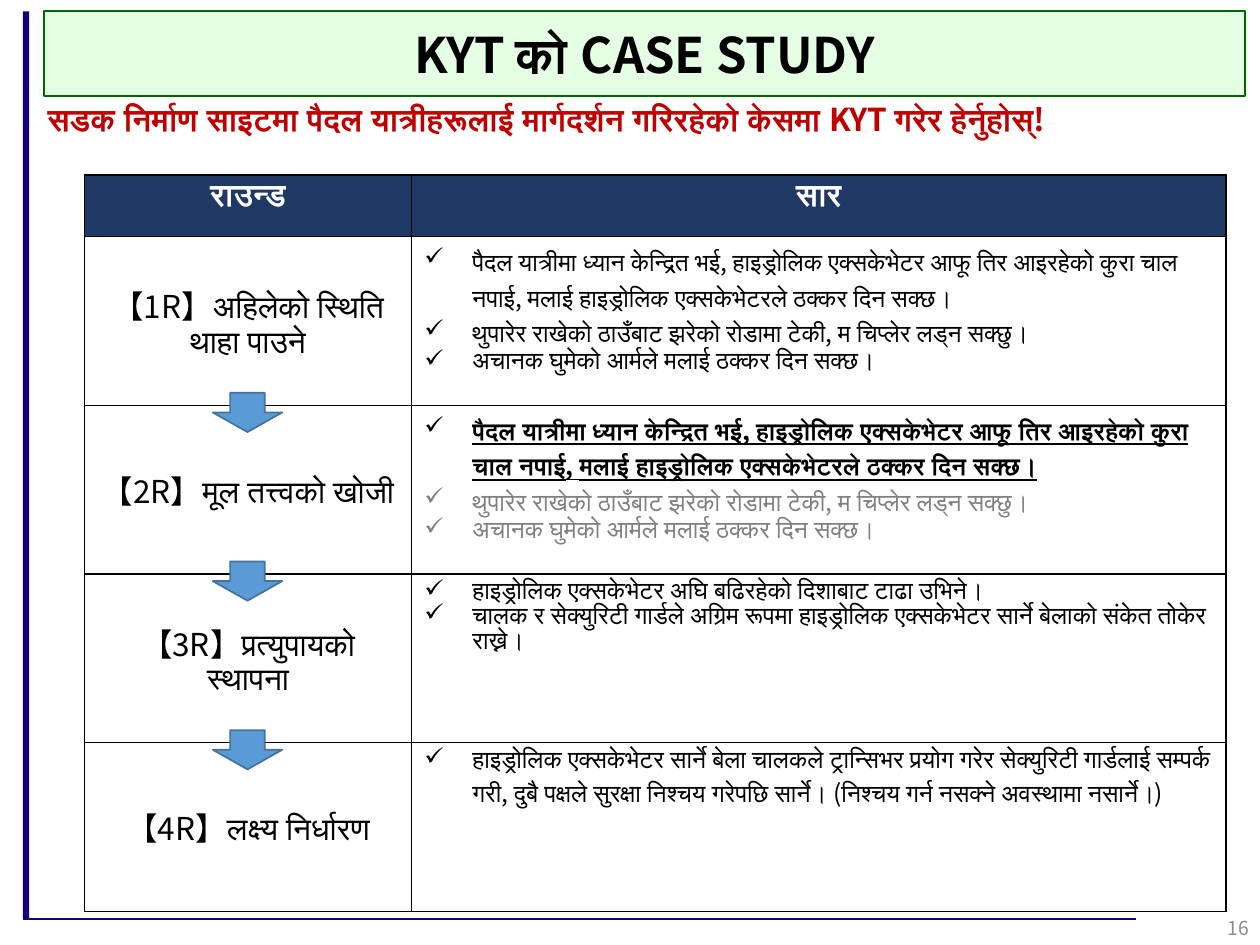
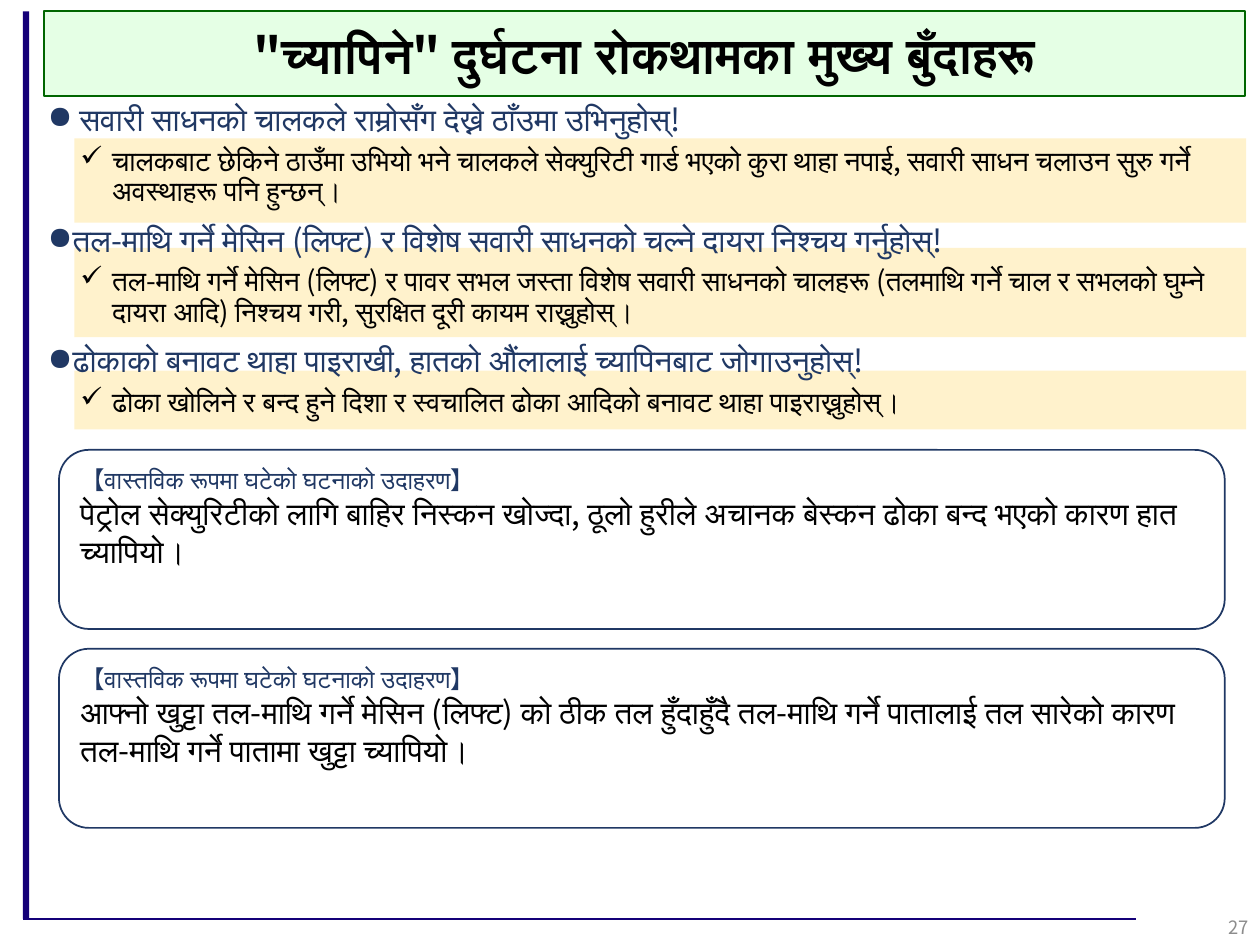
from lxml.etree import SubElement
from pptx import Presentation
from pptx.dml.color import RGBColor
from pptx.enum.shapes import MSO_CONNECTOR, MSO_SHAPE as Shape
from pptx.enum.text import MSO_ANCHOR as Anchor, PP_ALIGN as Align
from pptx.oxml import parse_xml
from pptx.oxml.ns import nsdecls, qn
from pptx.util import Cm, Pt

FONT = "Noto Sans CJK JP"
COLORS = {
    "frame": "140078", "title_fill": "CCFFCC", "title_line": "006600",
    "navy": "203864", "red": "C00000", "black": "000000", "white": "FFFFFF",
    "muted": "808080", "page_number": "8C8C8C", "band": "FFF2CC",
    "arrow": "5B9BD5", "arrow_line": "43739E",
}

HAZARDS = [
    "पैदल यात्रीमा ध्यान केन्द्रित भई, हाइड्रोलिक एक्सकेभेटर आफू तिर आइरहेको कुरा चाल नपाई, "
    "मलाई हाइड्रोलिक एक्सकेभेटरले ठक्कर दिन सक्छ।",
    "थुपारेर राखेको ठाउँबाट झरेको रोडामा टेकी, म चिप्लेर लड्न सक्छु।",
    "अचानक घुमेको आर्मले मलाई ठक्कर दिन सक्छ।",
]
ROUNDS = [
    ("【1R】अहिलेको स्थिति थाहा पाउने", HAZARDS),
    ("【2R】मूल तत्त्वको खोजी", HAZARDS),
    ("【3R】प्रत्युपायको स्थापना", [
        "हाइड्रोलिक एक्सकेभेटर अघि बढिरहेको दिशाबाट टाढा उभिने।",
        "चालक र सेक्युरिटी गार्डले अग्रिम रूपमा हाइड्रोलिक एक्सकेभेटर सार्ने बेलाको संकेत तोकेर राख्ने।",
    ]),
    ("【4R】लक्ष्य निर्धारण", [
        "हाइड्रोलिक एक्सकेभेटर सार्ने बेला चालकले ट्रान्सिभर प्रयोग गरेर सेक्युरिटी गार्डलाई सम्पर्क गरी, "
        "दुबै पक्षले सुरक्षा निश्चय गरेपछि सार्ने। (निश्चय गर्न नसक्ने अवस्थामा नसार्ने।)",
    ]),
]
KEY_ROUND = 2

# Heading, its left margin in cm, and the detail below it
POINTS = [
    ("सवारी साधनको चालकले राम्रोसँग देख्ने ठाँउमा उभिनुहोस्!", 0.64,
     "चालकबाट छेकिने ठाउँमा उभियो भने चालकले सेक्युरिटी गार्ड भएको कुरा थाहा नपाई, "
     "सवारी साधन चलाउन सुरु गर्ने अवस्थाहरू पनि हुन्छन्।"),
    ("तल-माथि गर्ने मेसिन (लिफ्ट) र विशेष सवारी साधनको चल्ने दायरा निश्चय गर्नुहोस्!", 0.03,
     "तल-माथि गर्ने मेसिन (लिफ्ट) र पावर सभल जस्ता विशेष सवारी साधनको चालहरू "
     "(तलमाथि गर्ने चाल र सभलको घुम्ने दायरा आदि) निश्चय गरी, सुरक्षित दूरी कायम राख्नुहोस्।"),
    ("ढोकाको बनावट थाहा पाइराखी, हातको औंलालाई च्यापिनबाट जोगाउनुहोस्!", 0.03,
     "ढोका खोलिने र बन्द हुने दिशा र स्वचालित ढोका आदिको बनावट थाहा पाइराख्नुहोस्।"),
]
BANDS = [(2.79, 1.7), (5.0, 1.8), (7.47, 1.19)]
CASE_LABEL = "【वास्तविक रूपमा घटेको घटनाको उदाहरण】"
CASES = [
    "पेट्रोल सेक्युरिटीको लागि बाहिर निस्कन खोज्दा, ठूलो हुरीले अचानक बेस्कन ढोका बन्द भएको कारण "
    "हात च्यापियो।",
    "आफ्नो खुट्टा तल-माथि गर्ने मेसिन (लिफ्ट) को ठीक तल हुँदाहुँदै तल-माथि गर्ने पातालाई तल सारेको कारण "
    "तल-माथि गर्ने पातामा खुट्टा च्यापियो।",
]


def rgb(name):
    return RGBColor.from_string(COLORS[name])


def write(para, text, size, color="black", bold=False, underline=False, align=Align.LEFT):
    para.text = text
    para.alignment = align
    for span in para.runs:
        font = span.font
        font.name, font.size = FONT, Pt(size)
        font.bold, font.underline = bold, underline
        font.color.rgb = rgb(color)
        east_asian = SubElement(span._r.get_or_add_rPr(), qn("a:ea"))
        east_asian.set("typeface", FONT)


def next_para(frame):
    """Return the empty first paragraph, or a new one once that is filled."""
    first = frame.paragraphs[0]
    return frame.add_paragraph() if first.runs else first


def set_bullet(para, char, margin, hanging):
    props = para._p.get_or_add_pPr()
    props.set("marL", str(Cm(margin)))
    props.set("indent", str(-Cm(hanging)))
    SubElement(props, qn("a:buChar")).set("char", char)


def add_box(page, kind, left, top, width, height, fill, line=None):
    box = page.shapes.add_shape(kind, Cm(left), Cm(top), Cm(width), Cm(height))
    box.shadow.inherit = False
    box.fill.solid()
    box.fill.fore_color.rgb = rgb(fill)
    if line:
        box.line.color.rgb = rgb(line)
        box.line.width = Pt(1)
    else:
        box.line.fill.background()
    return box


def add_text(page, left, top, width, height, anchor=Anchor.TOP):
    box = page.shapes.add_textbox(Cm(left), Cm(top), Cm(width), Cm(height))
    frame = box.text_frame
    frame.word_wrap = True
    frame.vertical_anchor = anchor
    return frame


def add_body(page):
    return add_text(page, 0.71, 1.98, 24.59, 16.94)


def add_page(deck, title, number, number_size):
    """Add a blank page with the frame lines, title band and page number."""
    page = deck.slides.add_slide(deck.slide_layouts[6])
    add_box(page, Shape.RECTANGLE, 0.46, 0.23, 0.13, 18.29, "frame")
    rule = page.shapes.add_connector(MSO_CONNECTOR.STRAIGHT, Cm(0.46), Cm(18.52), Cm(22.91), Cm(18.52))
    rule.line.color.rgb = rgb("frame")
    rule.line.width = Pt(1)
    SubElement(rule._element.spPr, qn("a:effectLst"))

    band = add_box(page, Shape.RECTANGLE, 0.89, 0.23, 24.21, 1.7, "title_fill", "title_line")
    tint = band._element.spPr.find(qn("a:solidFill"))[0]
    SubElement(tint, qn("a:alpha")).set("val", "50000")
    band.text_frame.vertical_anchor = Anchor.MIDDLE
    write(band.text_frame.paragraphs[0], title, 28, bold=True, align=Align.CENTER)

    footer = add_text(page, 19.71, 18.19, 5.72, 1.02, Anchor.MIDDLE)
    write(footer.paragraphs[0], number, number_size, "page_number", align=Align.RIGHT)
    return page


def style_cell(cell, fill, anchor=Anchor.TOP):
    cell.fill.solid()
    cell.fill.fore_color.rgb = rgb(fill)
    cell.vertical_anchor = anchor
    props = cell._tc.get_or_add_tcPr()
    for index, side in enumerate("LRTB"):
        props.insert(index, parse_xml(
            f'<a:ln{side} w="12700" {nsdecls("a")}><a:solidFill>'
            f'<a:srgbClr val="{COLORS["black"]}"/></a:solidFill></a:ln{side}>'))


def add_rounds_table(page):
    table = page.shapes.add_table(len(ROUNDS) + 1, 2, Cm(1.7), Cm(3.53), Cm(23.01), Cm(14.8)).table
    for column, width in zip(table.columns, (6.6, 16.41)):
        column.width = Cm(width)
    for index, row in enumerate(table.rows):
        row.height = Cm(3.4 if index else 1.24)

    for cell, heading in zip(table.rows[0].cells, ("राउन्ड", "सार")):
        style_cell(cell, "navy")
        write(cell.text_frame.paragraphs[0], heading, 18, "white", bold=True, align=Align.CENTER)

    for number, (label, findings) in enumerate(ROUNDS, 1):
        label_cell, findings_cell = table.rows[number].cells
        style_cell(label_cell, "white", Anchor.MIDDLE)
        write(label_cell.text_frame.paragraphs[0], label, 18, align=Align.CENTER)
        style_cell(findings_cell, "white")
        for index, finding in enumerate(findings):
            para = next_para(findings_cell.text_frame)
            key = number == KEY_ROUND and index == 0
            color = "muted" if number == KEY_ROUND and not key else "black"
            write(para, finding, 14, color, bold=key, underline=key)
            set_bullet(para, "✓", 0.97, 0.97)


def add_points(page):
    frame = add_body(page)
    for heading, margin, detail in POINTS:
        for text, size, color, char, left, space in (
            (heading, 18, "navy", "●", margin, 10),
            (detail, 16, "black", "✓", 1.3, 5),
        ):
            para = next_para(frame)
            write(para, text, size, color)
            para.line_spacing = 0.9
            para.space_before = Pt(space)
            set_bullet(para, char, left, 0.64)


def add_case(page, top, story):
    card = add_box(page, Shape.ROUNDED_RECTANGLE, 1.19, top, 23.5, 3.61, "white", "navy")
    frame = card.text_frame
    frame.vertical_anchor = Anchor.TOP
    write(next_para(frame), CASE_LABEL, 14, "navy")
    write(next_para(frame), story, 18)


def build_case_study(deck):
    page = add_page(deck, "KYT को CASE STUDY", "16", 11)
    intro = add_body(page).paragraphs[0]
    write(intro, "सडक निर्माण साइटमा पैदल यात्रीहरूलाई मार्गदर्शन गरिरहेको केसमा KYT गरेर हेर्नुहोस्!",
          18, "red", bold=True)
    intro.line_spacing = 0.9
    intro.space_before = Pt(10)
    add_rounds_table(page)
    for step in range(len(ROUNDS) - 1):
        add_box(page, Shape.DOWN_ARROW, 4.29, 7.92 + 3.4 * step, 1.4, 0.79, "arrow", "arrow_line")


def build_key_points(deck):
    page = add_page(deck, '"च्यापिने" दुर्घटना रोकथामका मुख्य बुँदाहरू', "27", 10.5)
    for top, height in BANDS:
        add_box(page, Shape.RECTANGLE, 1.5, top, 23.62, height, "band")
    add_points(page)
    for index, story in enumerate(CASES):
        add_case(page, 9.07 + 4.01 * index, story)


def main():
    deck = Presentation()
    deck.slide_width, deck.slide_height = Cm(25.4), Cm(19.05)
    build_case_study(deck)
    build_key_points(deck)
    deck.save("out.pptx")


if __name__ == "__main__":
    main()
